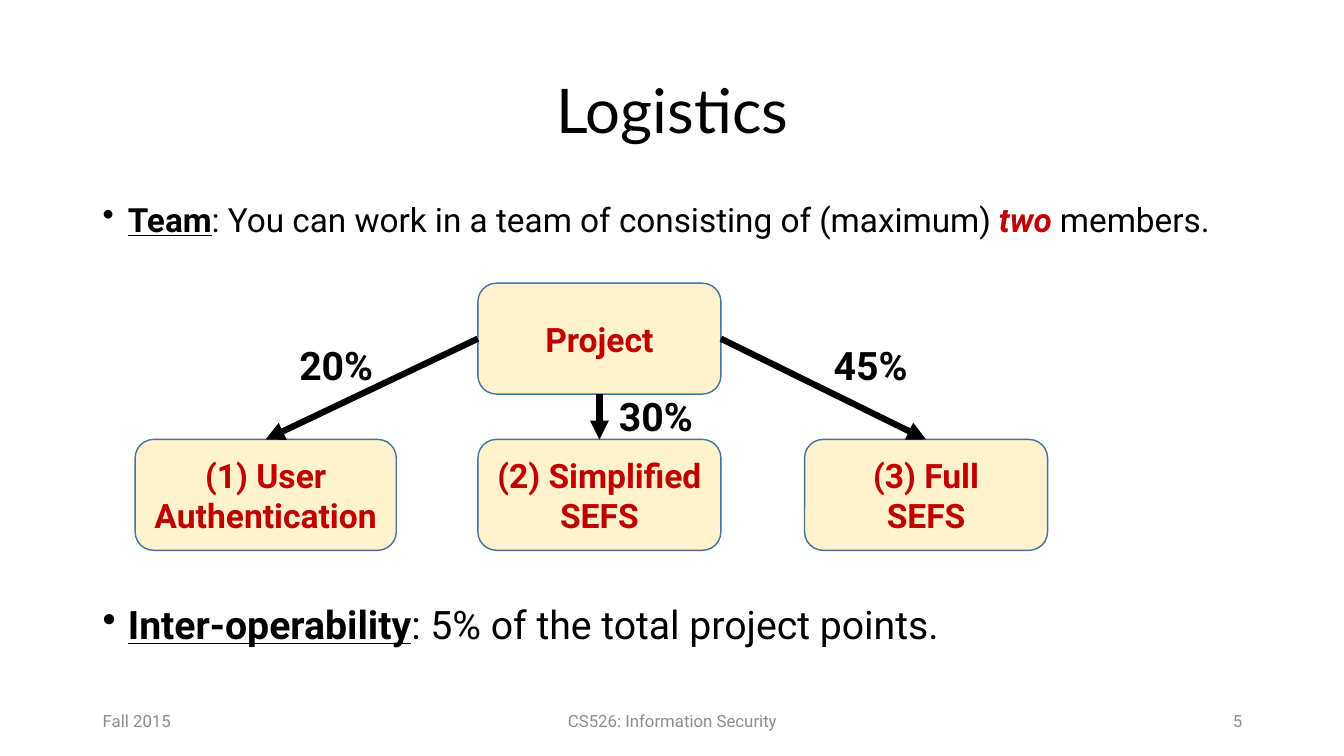
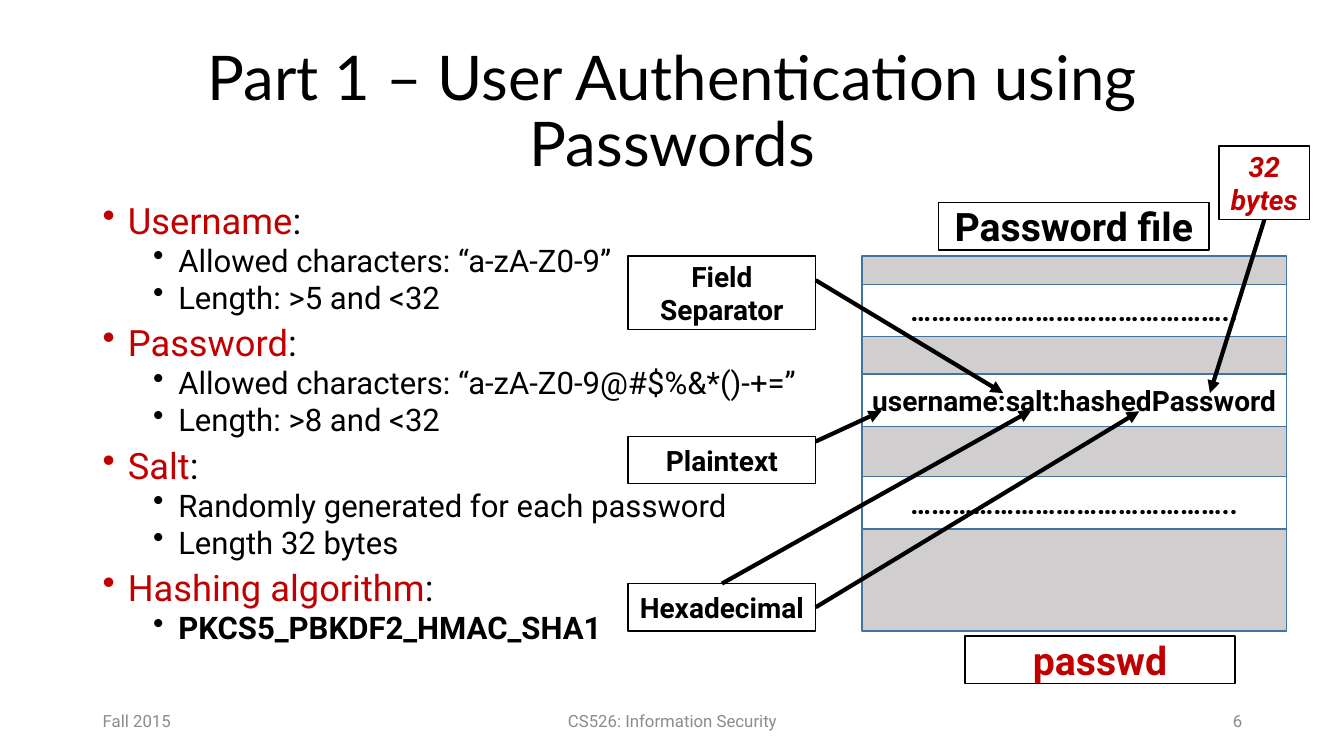
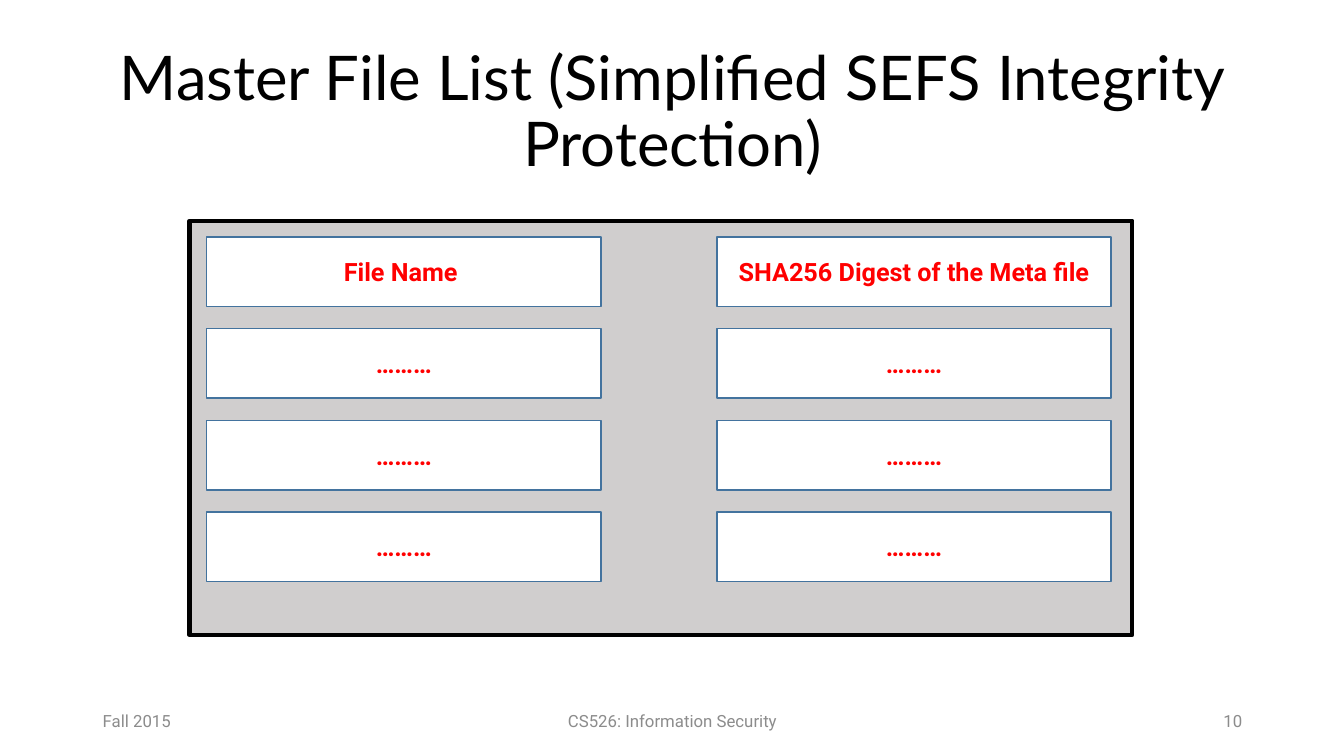
from dataclasses import dataclass
from typing import Any, Optional, Sequence, Union

import pptx
import pptx.dml.color
import pptx.enum.dml
import pptx.enum.shapes
import pptx.enum.text
import pptx.oxml.ns
import pptx.util
from lxml import etree

EMU_PER_PX = 9144
SLIDE_SIZE = (1333, 750)
TITLE_ONLY_LAYOUT = 5
TITLE_FONT = "Lato"
BODY_FONT = "Roboto"
COLORS = {
    "black": "000000",
    "white": "FFFFFF",
    "crimson": "C00000",
    "red": "FF0000",
    "cream": "FFF2CC",
    "gray": "D0CECE",
    "blue": "43739E",
    "footer": "8C8C8C",
}
ALIGN = pptx.enum.text.PP_ALIGN
ANCHOR = pptx.enum.text.MSO_ANCHOR
SHAPE = pptx.enum.shapes.MSO_SHAPE
TOP, BOTTOM, RIGHT, LEFT = 0, 2, 3, 1

Point = tuple[int, int]


@dataclass(frozen=True)
class Area:
    """A rectangle in px."""

    left: int
    top: int
    width: int
    height: int


@dataclass(frozen=True)
class TextStyle:
    """Font and alignment of a whole text."""

    size: float
    color: str = "black"
    bold: bool = False
    italic: bool = False
    align: Any = ALIGN.CENTER
    font: str = BODY_FONT


@dataclass(frozen=True)
class Box:
    """A filled and outlined shape with optional text."""

    area: Area
    text: str = ""
    style: TextStyle = TextStyle(20, bold=True)
    fill: str = "white"
    line: str = "black"
    weight: int = 1
    kind: Any = SHAPE.RECTANGLE


@dataclass(frozen=True)
class Site:
    """The middle of one side of a shape."""

    shape: Any
    side: int


@dataclass(frozen=True)
class Span:
    """A piece of bullet text that may differ from its paragraph."""

    text: str
    color: str = "black"
    bold: bool = False
    italic: bool = False
    underline: bool = False


@dataclass(frozen=True)
class Bullet:
    """A bulleted paragraph."""

    spans: Sequence[Span]
    size: float
    level: int = 0
    spacing: float = 0.8


FOOTERS = (
    (Area(92, 695, 300, 40), ALIGN.LEFT, "Fall 2015"),
    (Area(442, 695, 450, 40), ALIGN.CENTER, "CS526: Information Security"),
    (Area(942, 695, 300, 40), ALIGN.RIGHT, "{number}"),
)


def px(length: int) -> pptx.util.Emu:
    """Turn px into EMU."""
    return pptx.util.Emu(length * EMU_PER_PX)


def place(area: Area) -> tuple[pptx.util.Emu, ...]:
    """Give the position and size of an area in EMU."""
    return px(area.left), px(area.top), px(area.width), px(area.height)


def rgb(name: str) -> pptx.dml.color.RGBColor:
    """Look up a named colour."""
    return pptx.dml.color.RGBColor.from_string(COLORS[name])


def write_text(frame: Any, text: str, style: TextStyle, anchor: Any = ANCHOR.MIDDLE, wrap: bool = True) -> None:
    """Fill a text frame with uniformly styled paragraphs."""
    frame.word_wrap = wrap
    frame.vertical_anchor = anchor
    frame.text = text
    for paragraph in frame.paragraphs:
        paragraph.alignment = style.align
        font = paragraph.font
        font.name = style.font
        font.size = pptx.util.Pt(style.size)
        font.bold = style.bold
        font.italic = style.italic
        font.color.rgb = rgb(style.color)


def add_label(slide: Any, area: Area, text: str, style: TextStyle, anchor: Any = ANCHOR.MIDDLE, wrap: bool = True) -> None:
    """Add a text box in one style."""
    write_text(slide.shapes.add_textbox(*place(area)).text_frame, text, style, anchor, wrap)


def add_titled_slide(presentation: Any, title: str, number: int) -> Any:
    """Add a slide with its title and footers."""
    slide = presentation.slides.add_slide(presentation.slide_layouts[TITLE_ONLY_LAYOUT])
    shape = slide.shapes.title
    shape.left, shape.top, shape.width, shape.height = place(Area(92, 40, 1150, 145))
    write_text(shape.text_frame, title, TextStyle(44, font=TITLE_FONT))
    shape.text_frame.auto_size = pptx.enum.text.MSO_AUTO_SIZE.NONE
    shape.text_frame.paragraphs[0].line_spacing = 0.9
    for area, align, text in FOOTERS:
        add_label(slide, area, text.format(number=number), TextStyle(12, "footer", align=align))
    return slide


def add_box(slide: Any, box: Box) -> Any:
    """Draw a box and return its shape."""
    shape = slide.shapes.add_shape(box.kind, *place(box.area))
    shape.shadow.inherit = False
    shape.fill.solid()
    shape.fill.fore_color.rgb = rgb(box.fill)
    shape.line.color.rgb = rgb(box.line)
    shape.line.width = pptx.util.Pt(box.weight)
    if box.text:
        write_text(shape.text_frame, box.text, box.style)
    return shape


def add_arrow(slide: Any, start: Union[Site, Point], end: Union[Site, Point], weight: float) -> None:
    """Draw an arrow between points or shape sides."""
    points = [(0, 0) if isinstance(stop, Site) else stop for stop in (start, end)]
    connector = slide.shapes.add_connector(
        pptx.enum.shapes.MSO_CONNECTOR.STRAIGHT, *(px(value) for point in points for value in point)
    )
    if isinstance(start, Site):
        connector.begin_connect(start.shape, start.side)
    if isinstance(end, Site):
        connector.end_connect(end.shape, end.side)
    connector.line.color.rgb = rgb("black")
    connector.line.width = pptx.util.Pt(weight)
    line = connector.line._get_or_add_ln()
    etree.SubElement(line, pptx.oxml.ns.qn("a:tailEnd"), type="triangle")
    etree.SubElement(connector._element.spPr, pptx.oxml.ns.qn("a:effectLst"))


def add_bullets(slide: Any, area: Area, bullets: Sequence[Bullet]) -> None:
    """Add a text box of bulleted paragraphs."""
    frame = slide.shapes.add_textbox(*place(area)).text_frame
    frame.word_wrap = True
    for index, bullet in enumerate(bullets):
        paragraph = frame.add_paragraph() if index else frame.paragraphs[0]
        paragraph.level = bullet.level
        paragraph.line_spacing = bullet.spacing
        if index:
            paragraph.space_before = pptx.util.Pt(5 if bullet.level else 10)
        properties = paragraph._p.get_or_add_pPr()
        properties.set("marL", str(px(25 + 50 * bullet.level)))
        properties.set("indent", str(px(-25)))
        color = etree.SubElement(properties, pptx.oxml.ns.qn("a:buClr"))
        etree.SubElement(color, pptx.oxml.ns.qn("a:srgbClr"), val=COLORS[bullet.spans[0].color])
        etree.SubElement(properties, pptx.oxml.ns.qn("a:buChar"), char="•")
        paragraph.font.name = BODY_FONT
        paragraph.font.size = pptx.util.Pt(bullet.size)
        for span in bullet.spans:
            run = paragraph.add_run()
            run.text = span.text
            run.font.color.rgb = rgb(span.color)
            run.font.bold = span.bold
            run.font.italic = span.italic
            run.font.underline = span.underline


def build_logistics(presentation: Any) -> None:
    """Build the slide on teams and project weights."""
    slide = add_titled_slide(presentation, "Logistics", 5)
    team = (
        Span("Team", bold=True, underline=True),
        Span(": You can work in a team of consisting of (maximum) "),
        Span("two ", "crimson", bold=True, italic=True),
        Span("members."),
    )
    add_bullets(slide, Area(92, 200, 1150, 56), [Bullet(team, 23.8)])

    def add_node(left: int, top: int, width: int, text: str) -> Any:
        """Draw one node of the project tree."""
        style = TextStyle(24, "crimson", bold=True)
        area = Area(left, top, width, 110)
        return add_box(slide, Box(area, text, style, "cream", "blue", kind=SHAPE.ROUNDED_RECTANGLE))

    project = add_node(474, 281, 241, "Project")
    parts = (
        (134, 259, "(1) User Authentication", LEFT),
        (474, 241, "(2) Simplified SEFS", BOTTOM),
        (798, 241, "(3) Full\nSEFS", RIGHT),
    )
    for left, width, text, side in parts:
        part = add_node(left, 436, width, text)
        add_arrow(slide, Site(project, side), Site(part, TOP), 4.5)

    operability = (
        Span("Inter-operability", bold=True, underline=True),
        Span(": 5% of the total project points."),
    )
    add_bullets(slide, Area(92, 596, 1150, 56), [Bullet(operability, 28, spacing=0.9)])
    share_style = TextStyle(28, bold=True, align=ALIGN.LEFT)
    for left, top, share in ((287, 334, "20%"), (604, 384, "30%"), (817, 334, "45%")):
        add_label(slide, Area(left, top, 94, 57), share, share_style, ANCHOR.TOP, wrap=False)


def build_authentication(presentation: Any) -> None:
    """Build the slide on the password file."""
    slide = add_titled_slide(presentation, "Part 1 – User Authentication using Passwords", 6)
    topics = (
        ("Username", ("Allowed characters: “a-zA-Z0-9”", "Length: >5 and <32"), False),
        ("Password", ("Allowed characters: “a-zA-Z0-9@#$%&*()-+=”", "Length: >8 and <32"), False),
        ("Salt", ("Randomly generated for each password", "Length 32 bytes"), False),
        ("Hashing algorithm", ("PKCS5_PBKDF2_HMAC_SHA1",), True),
    )
    bullets: list[Bullet] = []
    for topic, details, bold in topics:
        bullets.append(Bullet((Span(topic, "crimson"), Span(":")), 25.9))
        bullets.extend(Bullet((Span(detail, bold=bold),), 22.2, level=1) for detail in details)
    add_bullets(slide, Area(92, 200, 717, 476), bullets)

    add_box(slide, Box(Area(855, 254, 421, 372), fill="gray", line="blue"))
    dots = "……………………………………….."
    for top, text in ((282, dots), (371, "username:salt:hashedPassword"), (473, dots)):
        add_box(slide, Box(Area(855, top, 421, 52), text, line="blue"))
    for left, top, text, color in ((931, 201, "Password file", "black"), (957, 631, "passwd", "crimson")):
        add_box(slide, Box(Area(left, top, 268, 47), text, TextStyle(28, color, bold=True)))

    add_box(slide, Box(Area(623, 254, 186, 73), "Field Separator"))
    add_box(slide, Box(Area(623, 433, 186, 47), "Plaintext"))
    hexadecimal = add_box(slide, Box(Area(623, 579, 186, 47), "Hexadecimal"))
    size_style = TextStyle(20, "crimson", bold=True, italic=True)
    size = add_box(slide, Box(Area(1209, 145, 90, 73), "32 bytes", size_style))
    arrows: tuple[tuple[Union[Site, Point], Point], ...] = (
        ((809, 438), (874, 408)),
        ((809, 278), (995, 390)),
        (Site(hexadecimal, RIGHT), (1130, 408)),
        (Site(hexadecimal, TOP), (1023, 407)),
        (Site(size, BOTTOM), (1200, 390)),
    )
    for start, end in arrows:
        add_arrow(slide, start, end, 3)


def build_file_list(presentation: Any) -> None:
    """Build the slide on the master file list."""
    slide = add_titled_slide(presentation, "Master File List (Simplified SEFS Integrity Protection)", 10)
    add_box(slide, Box(Area(188, 219, 935, 411), fill="gray", weight=3))
    style = TextStyle(18, "red", bold=True)
    rows = [("File Name ", "SHA256 Digest of the Meta file")] + [("………", "………")] * 3
    for row, texts in enumerate(rows):
        for column, text in enumerate(texts):
            area = Area(205 + 506 * column, 235 + 91 * row, 391, 69)
            add_box(slide, Box(area, text, style, line="blue"))


def main() -> None:
    """Build and save the presentation."""
    presentation = pptx.Presentation()
    presentation.slide_width, presentation.slide_height = (px(length) for length in SLIDE_SIZE)
    build_logistics(presentation)
    build_authentication(presentation)
    build_file_list(presentation)
    presentation.save("out.pptx")


if __name__ == "__main__":
    main()
